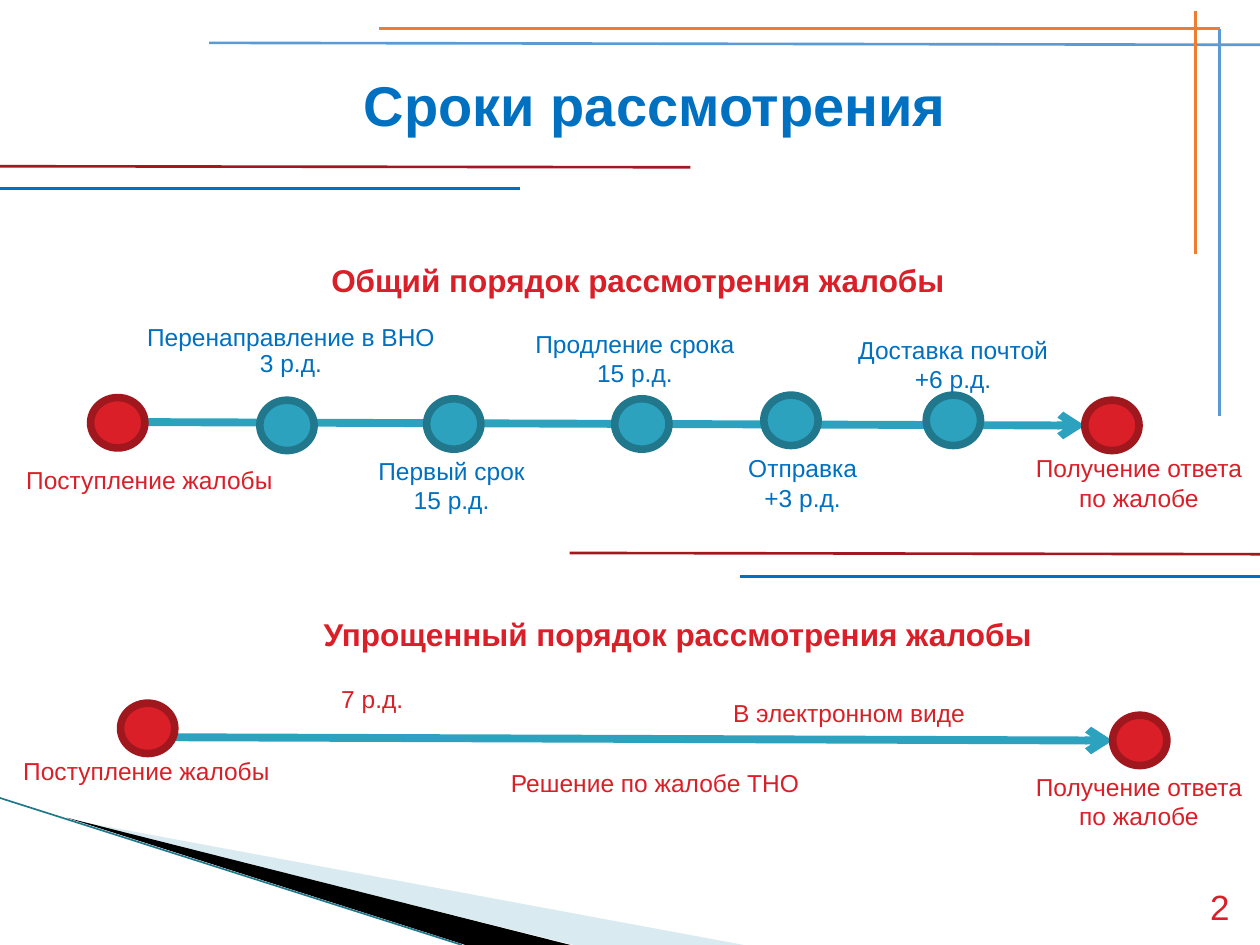
from lxml import etree
from pptx import Presentation
from pptx.dml.color import RGBColor
from pptx.enum.shapes import MSO_CONNECTOR as Connector, MSO_SHAPE as Shape
from pptx.enum.text import MSO_ANCHOR as Anchor, MSO_AUTO_SIZE as AutoSize, PP_ALIGN as Align
from pptx.oxml.ns import qn
from pptx.util import Pt

COLOURS = {
    "red": "DA1F28", "dark red": "A1171E", "rule red": "A3171E",
    "blue": "0070C0", "light blue": "5B9BD5", "orange": "ED7D31",
    "teal": "2DA2BF", "dark teal": "21788D", "pale": "A0CBDC", "black": "000000",
}


def colour(name):
    return RGBColor.from_string(COLOURS[name])


def write_text(frame, text, size=14, ink="red", bold=False, align=Align.LEFT, spacing=None):
    """Fill a text frame, one paragraph for each line of text."""
    for index, line in enumerate(text.split("\n")):
        paragraph = frame.paragraphs[0] if index == 0 else frame.add_paragraph()
        paragraph.alignment = align
        if spacing:
            paragraph.line_spacing = spacing
        run = paragraph.add_run()
        run.text = line
        run.font.name = "Arial"
        run.font.size = Pt(size)
        run.font.bold = bold
        run.font.color.rgb = colour(ink)


class SlideBuilder:
    dot_width, dot_height, dot_border = 31, 28.8, 4.33
    rule_width, arrow_width = 1.5, 4.5

    def __init__(self, slide):
        self.slide = slide

    def text(self, box, text, wrap=False, grow=True, anchor=Anchor.TOP, **style):
        shape = self.slide.shapes.add_textbox(*map(Pt, box))
        frame = shape.text_frame
        frame.word_wrap = wrap
        frame.auto_size = AutoSize.SHAPE_TO_FIT_TEXT if grow else AutoSize.NONE
        frame.vertical_anchor = anchor
        write_text(frame, text, **style)

    def line(self, start, end, ink, width=rule_width):
        line = self.slide.shapes.add_connector(
            Connector.STRAIGHT, *map(Pt, start + end))
        line.line.color.rgb = colour(ink)
        line.line.width = Pt(width)
        etree.SubElement(line._element.spPr, qn("a:effectLst"))
        return line

    def arrow(self, start, end):
        line = self.line(start, end, "teal", self.arrow_width)
        etree.SubElement(line.line._get_or_add_ln(), qn("a:tailEnd"), type="arrow")

    def dot(self, left, top, ink):
        shape = self.slide.shapes.add_shape(
            Shape.OVAL, Pt(left), Pt(top), Pt(self.dot_width), Pt(self.dot_height))
        shape.shadow.inherit = False
        shape.fill.solid()
        shape.fill.fore_color.rgb = colour(ink)
        shape.line.color.rgb = colour("dark " + ink)
        shape.line.width = Pt(self.dot_border)

    def wedge(self, points, ink, opacity=100):
        corners = [(Pt(x), Pt(y)) for x, y in points]
        builder = self.slide.shapes.build_freeform(*corners[0])
        builder.add_line_segments(corners[1:], close=True)
        shape = builder.convert_to_shape()
        shape.shadow.inherit = False
        shape.fill.solid()
        shape.fill.fore_color.rgb = colour(ink)
        shape.line.fill.background()
        if opacity < 100:
            fill_colour = shape._element.spPr.find(".//" + qn("a:srgbClr"))
            etree.SubElement(fill_colour, qn("a:alpha"), val=str(opacity * 1000))


def main():
    presentation = Presentation()
    presentation.slide_width, presentation.slide_height = Pt(720), Pt(540)
    builder = SlideBuilder(presentation.slides.add_slide(presentation.slide_layouts[6]))

    # Corner wedges
    builder.wedge([(39.6, 468.4), (425, 540), (328, 540)], "pale", opacity=40)
    builder.wedge([(38.2, 467.3), (326, 540), (266, 540)], "black")
    builder.line((0, 456), (264, 540), "dark teal", 0.95)

    # Title and rules
    builder.text((200.9, 36.7, 358.6, 46), "Сроки рассмотрения", size=32, ink="blue", bold=True)
    rules = [
        ((0, 95), (394.5, 95.6), "rule red"),
        ((0, 107.7), (297, 107.7), "blue"),
        ((325.5, 316), (720, 316.7), "rule red"),
        ((423, 329.3), (720, 329.3), "blue"),
        ((697, 237.6), (697, 16.5), "light blue"),
        ((720, 25.6), (119.5, 24.5), "light blue"),
        ((683.3, 145.4), (683.3, 6.5), "orange"),
        ((697, 16.3), (216.7, 16.3), "orange"),
    ]
    for start, end, ink in rules:
        builder.line(start, end, ink)

    # Section headings
    builder.text((182.2, 145.4, 368.6, 28.8), "Общий порядок рассмотрения жалобы",
                 size=18, bold=True)
    builder.text((177.8, 347.8, 428.4, 28.8), "Упрощенный порядок рассмотрения жалобы",
                 size=18, bold=True)

    # Arrows of the two timelines, then their dots
    builder.arrow((82.8, 241.2), (619.9, 243.2))
    builder.arrow((97.9, 421.3), (635.8, 423.2))
    dots = [
        (51.8, 227.2, "red"), (148.5, 228.7, "teal"), (243.8, 227.9, "teal"),
        (351.3, 227.9, "teal"), (436.5, 225.8, "teal"), (529.3, 225.8, "teal"),
        (619.9, 228.7, "red"), (68.9, 401.8, "red"), (635.8, 408.7, "red"),
    ]
    for dot in dots:
        builder.dot(*dot)

    # Stage labels of the general procedure
    builder.text((76.3, 182.2, 180, 38.2), "Перенаправление в ВНО 3 р.д.", wrap=True,
                 ink="blue", align=Align.CENTER, spacing=0.9)
    stages = [
        ((206.6, 257, 103, 41), "Первый срок\n15 р.д."),
        ((296.6, 184.3, 132.5, 41), "Продление срока\n15 р.д."),
        ((418, 255.6, 81.4, 41), "Отправка\n+3 р.д."),
        ((481, 187.9, 127.4, 41), "Доставка почтой\n+6 р.д."),
    ]
    for box, label in stages:
        builder.text(box, label, ink="blue", align=Align.CENTER)

    # Start and end labels of both timelines
    for left, top in [(7.9, 264.2), (6.2, 430.6)]:
        builder.text((left, top, 156.2, 22.3), "Поступление жалобы", spacing=0.9)
    for top in (255.6, 437.4):
        builder.text((582.5, top, 136.8, 41), "Получение ответа\nпо жалобе", align=Align.CENTER)

    # Labels of the simplified procedure
    builder.text((187.9, 387.4, 50.4, 24.2), "7 р.д.")
    builder.text((411.8, 395.3, 147.6, 24.2), "В электронном виде")
    builder.text((284.4, 435.6, 180, 24.2), "Решение по жалобе ТНО", align=Align.CENTER)

    # Slide number
    builder.text((681, 504.7, 28.8, 28.8), "2", wrap=True, grow=False,
                 anchor=Anchor.BOTTOM, size=20, align=Align.RIGHT)

    presentation.save("out.pptx")


if __name__ == "__main__":
    main()
